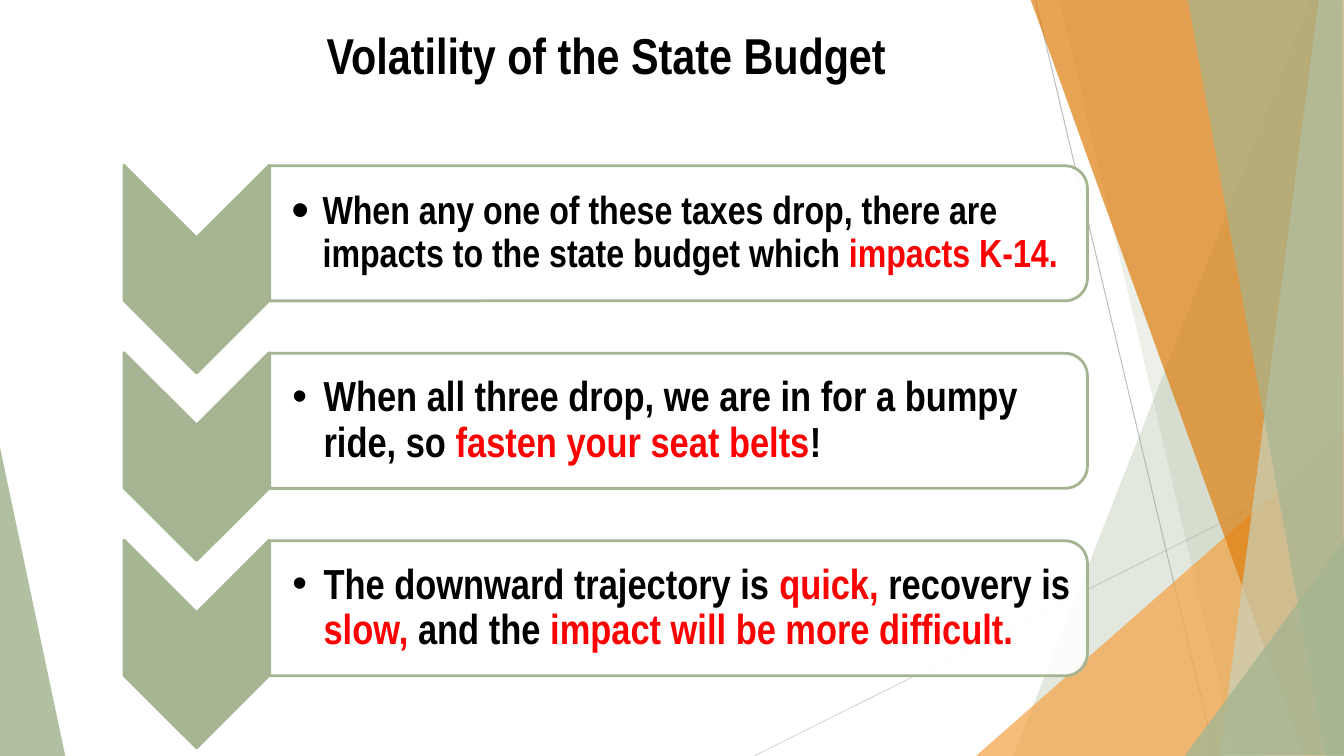
from lxml.etree import SubElement
from pptx import Presentation
from pptx.dml.color import RGBColor
from pptx.enum.shapes import MSO_CONNECTOR, MSO_SHAPE
from pptx.enum.text import MSO_ANCHOR, PP_ALIGN
from pptx.oxml.ns import qn
from pptx.util import Inches, Pt

FONT = "Arial Narrow"
BLACK, RED, WHITE = "000000", "FF0000", "FFFFFF"
SAGE, PALE_SAGE, AMBER, ORANGE = "A5B592", "C8D2BC", "F3A447", "DD7E0E"
PITCH = 1.86

RAYS = [
    ("D8D8D8", (7.48, 7.5), (13.35, 4.57)),
    ("BFBFBF", (10.27, 0), (12.05, 7.5)),
]
LEFT_FACET = (SAGE, 85, [(-0.01, 4.39), (0.65, 7.51), (-0.01, 7.5)])
RIGHT_FACETS = [
    (SAGE, 30, [(13, 0), (10.05, 7.5), (13.36, 7.51), (13.35, 0.01)]),
    (SAGE, 20, [(10.51, -0.01), (12.26, 7.5), (13.35, 7.5), (13.35, -0.01)]),
    (AMBER, 72, [(9.68, 7.5), (13.33, 4.29), (13.34, 7.5)]),
    (ORANGE, 70, [(10.22, -0.01), (12.93, 7.5), (13.35, 7.49), (13.35, -0.01)]),
    (PALE_SAGE, 70, [(13.08, -0.01), (12.1, 7.5), (13.35, 7.5), (13.34, -0.01)]),
    (SAGE, 65, [(11.78, -0.01), (13.15, 7.5), (13.33, 7.5), (13.31, -0.01)]),
    (SAGE, 80, [(11.75, 7.5), (13.34, 5.35), (13.35, 7.49)]),
]
POINTS = [
    (28, 130, 0.22, [
        ("When any one of these taxes drop, there are impacts to the state budget which ", BLACK),
        ("impacts K-14.", RED),
    ]),
    (30, 100, 0.23, [
        ("When all three drop, we are in for a bumpy ride, so ", BLACK),
        ("fasten your seat belts", RED),
        ("!", BLACK),
    ]),
    (30, 100, 0.23, [
        ("The downward trajectory is ", BLACK),
        ("quick,", RED),
        (" recovery is ", BLACK),
        ("slow, ", RED),
        ("and the ", BLACK),
        ("impact will be more difficult.", RED),
    ]),
]


def rgb(value):
    """Turn a hex string into a colour."""
    return RGBColor.from_string(value)


def paint(sp, fill, opacity=100, line=None):
    """Set the fill, its opacity in percent and the outline of a shape."""
    sp.shadow.inherit = False
    sp.fill.solid()
    sp.fill.fore_color.rgb = rgb(fill)
    if opacity < 100:
        clr = sp.element.spPr.find(qn("a:solidFill")).find(qn("a:srgbClr"))
        SubElement(clr, qn("a:alpha"), val=str(opacity * 1000))
    if line:
        sp.line.color.rgb = rgb(line)
        sp.line.width = Pt(2)
    else:
        sp.line.fill.background()


def add_facet(s, fill, opacity, points):
    """Draw one translucent polygon of the background."""
    corners = [(Inches(x), Inches(y)) for x, y in points]
    fb = s.shapes.build_freeform(*corners[0])
    fb.add_line_segments(corners[1:], close=True)
    paint(fb.convert_to_shape(), fill, opacity)


def add_ray(s, color, start, end):
    """Draw one thin line of the background."""
    ends = [Inches(v) for v in start + end]
    cn = s.shapes.add_connector(MSO_CONNECTOR.STRAIGHT, *ends)
    cn.line.color.rgb = rgb(color)
    cn.line.width = Pt(0.75)
    SubElement(cn.element.spPr, qn("a:effectLst"))


def add_turned(s, shape, x, y, w, h, fill, opacity=100):
    """Draw a preset shape turned a quarter clockwise."""
    sp = s.shapes.add_shape(shape, Inches(x), Inches(y), Inches(w), Inches(h))
    sp.rotation = 90
    paint(sp, fill, opacity, SAGE)


def add_text(s, x, y, w, h, runs, size, insets):
    """Add a bold one-paragraph text box and return its frame."""
    tb = s.shapes.add_textbox(Inches(x), Inches(y), Inches(w), Inches(h))
    tf = tb.text_frame
    tf.word_wrap = True
    tf.margin_left, tf.margin_top, tf.margin_right, tf.margin_bottom = map(Inches, insets)
    for text, color in runs:
        r = tf.paragraphs[0].add_run()
        r.text = text
        r.font.name = FONT
        r.font.size = Pt(size)
        r.font.bold = True
        r.font.color.rgb = rgb(color)
    return tf


def set_bullet(p, percent):
    """Give a paragraph a black hanging bullet."""
    pPr = p._p.get_or_add_pPr()
    pPr.set("marL", str(Inches(0.31)))
    pPr.set("indent", str(-Inches(0.31)))
    clr = SubElement(pPr, qn("a:buClr"))
    SubElement(clr, qn("a:srgbClr"), val=BLACK)
    SubElement(pPr, qn("a:buSzPct"), val=str(percent * 1000))
    SubElement(pPr, qn("a:buFont"), typeface="Arial")
    SubElement(pPr, qn("a:buChar"), char="•")


def add_point(s, row, size, bullet, inset, runs):
    """Add one row: chevron, rounded panel and bulleted text."""
    dy = row * PITCH
    add_turned(s, MSO_SHAPE.CHEVRON, 0.92, 1.95 + dy, 2.06, 1.44, SAGE)
    add_turned(s, MSO_SHAPE.ROUND_2_SAME_RECTANGLE, 6.06, -1.74 + dy, 1.34, 8.11, WHITE, 90)
    tf = add_text(s, 2.67, 1.71 + dy, 8.04, 1.21, runs, size, (inset, 0.02, 0.02, 0.02))
    tf.vertical_anchor = MSO_ANCHOR.MIDDLE
    p = tf.paragraphs[0]
    set_bullet(p, bullet)
    p.line_spacing = 0.9


def main():
    """Build and save the slide."""
    prs = Presentation()
    prs.slide_width, prs.slide_height = Inches(13.33), Inches(7.5)
    s = prs.slides.add_slide(prs.slide_layouts[6])
    add_facet(s, *LEFT_FACET)
    for ray in RAYS:
        add_ray(s, *ray)
    for facet in RIGHT_FACETS:
        add_facet(s, *facet)
    title = [("Volatility of the State Budget", BLACK)]
    tf = add_text(s, 2.17, 0.19, 7.69, 1.25, title, 36, (0.1, 0.05, 0.1, 0.05))
    tf.paragraphs[0].alignment = PP_ALIGN.CENTER
    for row, point in enumerate(POINTS):
        add_point(s, row, *point)
    prs.save("out.pptx")


if __name__ == "__main__":
    main()
